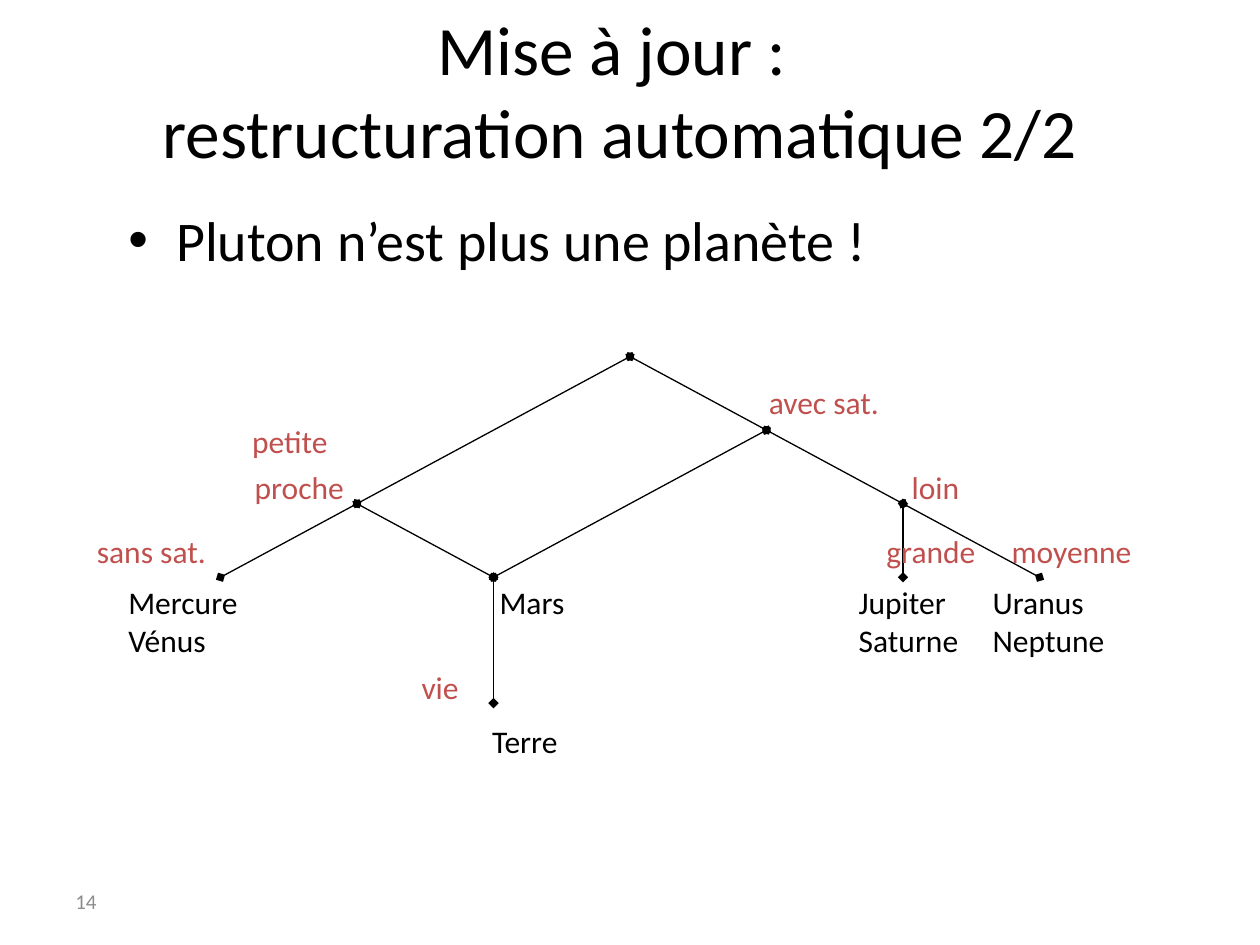
import lxml.etree
import pptx
import pptx.dml.color
import pptx.enum.shapes
import pptx.enum.text
import pptx.oxml.ns
import pptx.util
from pptx.util import Inches

FONT = "Calibri"
BLACK, RED, GREY = "000000", "C0504D", "8C8C8C"

# Tree nodes as (column, row) on the grid
NODES = {
    "root": (3, 0),
    "satellites": (4, 1),
    "near": (1, 2),
    "far": (5, 2),
    "no satellites": (0, 3),
    "mars": (2, 3),
    "large": (5, 3),
    "medium": (6, 3),
    "life": (2, 4.71),
}
EDGES = [
    ("near", "root"), ("mars", "satellites"), ("no satellites", "near"),
    ("far", "satellites"), ("satellites", "root"), ("medium", "far"),
    ("mars", "near"), ("large", "far"), ("life", "mars"),
]
# Text, node it belongs to, offset from that node in inches, colour
LABELS = [
    ("avec sat.", "satellites", -0.08, -0.42, RED),
    ("petite", "near", -0.93, -0.7, RED),
    ("proche", "near", -0.91, -0.33, RED),
    ("loin", "far", -0.03, -0.33, RED),
    ("sans sat.", "no satellites", -1.08, -0.41, RED),
    ("grande", "large", -0.23, -0.41, RED),
    ("moyenne", "medium", -0.32, -0.41, RED),
    ("vie", "life", -0.67, -0.33, RED),
    ("Mercure\nVénus", "no satellites", -0.83, 0, BLACK),
    ("Mars", "mars", -0.05, 0, BLACK),
    ("Jupiter\nSaturne", "large", -0.45, 0, BLACK),
    ("Uranus\nNeptune", "medium", -0.47, 0, BLACK),
    ("Terre", "life", -0.11, 0.1, BLACK),
]


def color(value):
    return pptx.dml.color.RGBColor.from_string(value)


def add_text(slide, box, text, size, font_color=BLACK, centered=False, middle=False):
    shape = slide.shapes.add_textbox(*box)
    frame = shape.text_frame
    frame.word_wrap = True
    if middle:
        frame.vertical_anchor = pptx.enum.text.MSO_ANCHOR.MIDDLE
    frame.text = text
    for paragraph in frame.paragraphs:
        if centered:
            paragraph.alignment = pptx.enum.text.PP_ALIGN.CENTER
        for run in paragraph.runs:
            run.font.name = FONT
            run.font.size = pptx.util.Pt(size)
            run.font.color.rgb = color(font_color)
    return shape


def add_title(slide, box):
    add_text(slide, box, "Mise à jour : \vrestructuration automatique 2/2", 39.6,
             centered=True, middle=True)


def add_body(slide, box):
    shape = add_text(slide, box, "Pluton n’est plus une planète !", 32)
    for paragraph in shape.text_frame.paragraphs:
        properties = paragraph._p.get_or_add_pPr()
        properties.set("marL", str(Inches(0.38)))
        properties.set("indent", str(Inches(-0.38)))
        font = lxml.etree.SubElement(properties, pptx.oxml.ns.qn("a:buFont"))
        font.set("typeface", "Arial")
        bullet = lxml.etree.SubElement(properties, pptx.oxml.ns.qn("a:buChar"))
        bullet.set("char", "•")


def add_edge(slide, start, end):
    connector = slide.shapes.add_connector(
        pptx.enum.shapes.MSO_CONNECTOR.STRAIGHT, *start, *end)
    connector.line.color.rgb = color(BLACK)
    connector.line.width = pptx.util.Pt(0.75)
    line = connector.line._get_or_add_ln()
    for tag in ("a:headEnd", "a:tailEnd"):
        lxml.etree.SubElement(line, pptx.oxml.ns.qn(tag)).set("type", "diamond")
    lxml.etree.SubElement(connector._element.spPr, pptx.oxml.ns.qn("a:effectLst"))


def add_tree(slide, box):
    left, top, width, height = box
    column_width = width / max(column for column, row in NODES.values())
    row_height = height / max(row for column, row in NODES.values())
    points = {
        name: (round(left + column * column_width), round(top + row * row_height))
        for name, (column, row) in NODES.items()
    }
    for start, end in EDGES:
        add_edge(slide, points[start], points[end])
    for text, node, offset_x, offset_y, font_color in LABELS:
        x, y = points[node]
        label_height = Inches(0.1 + 0.3 * len(text.split("\n")))
        label_box = (x + Inches(offset_x), y + Inches(offset_y), Inches(1.25), label_height)
        shape = add_text(slide, label_box, text, 18, font_color)
        shape.text_frame.word_wrap = False


def add_slide_number(slide, box):
    add_text(slide, box, "14", 12, GREY, middle=True)


def main():
    presentation = pptx.Presentation()
    presentation.slide_width = Inches(10)
    presentation.slide_height = Inches(7.5)
    slide = presentation.slides.add_slide(presentation.slide_layouts[6])

    add_slide_number(slide, (Inches(0.5), Inches(6.95), Inches(2.33), Inches(0.4)))
    add_title(slide, (Inches(0.92), Inches(0.17), Inches(8), Inches(1.08)))
    add_body(slide, (Inches(0.92), Inches(1.58), Inches(8.33), Inches(0.92)))
    add_tree(slide, (Inches(1.75), Inches(2.83), Inches(6.5), Inches(2.75)))

    presentation.save("out.pptx")


if __name__ == "__main__":
    main()
